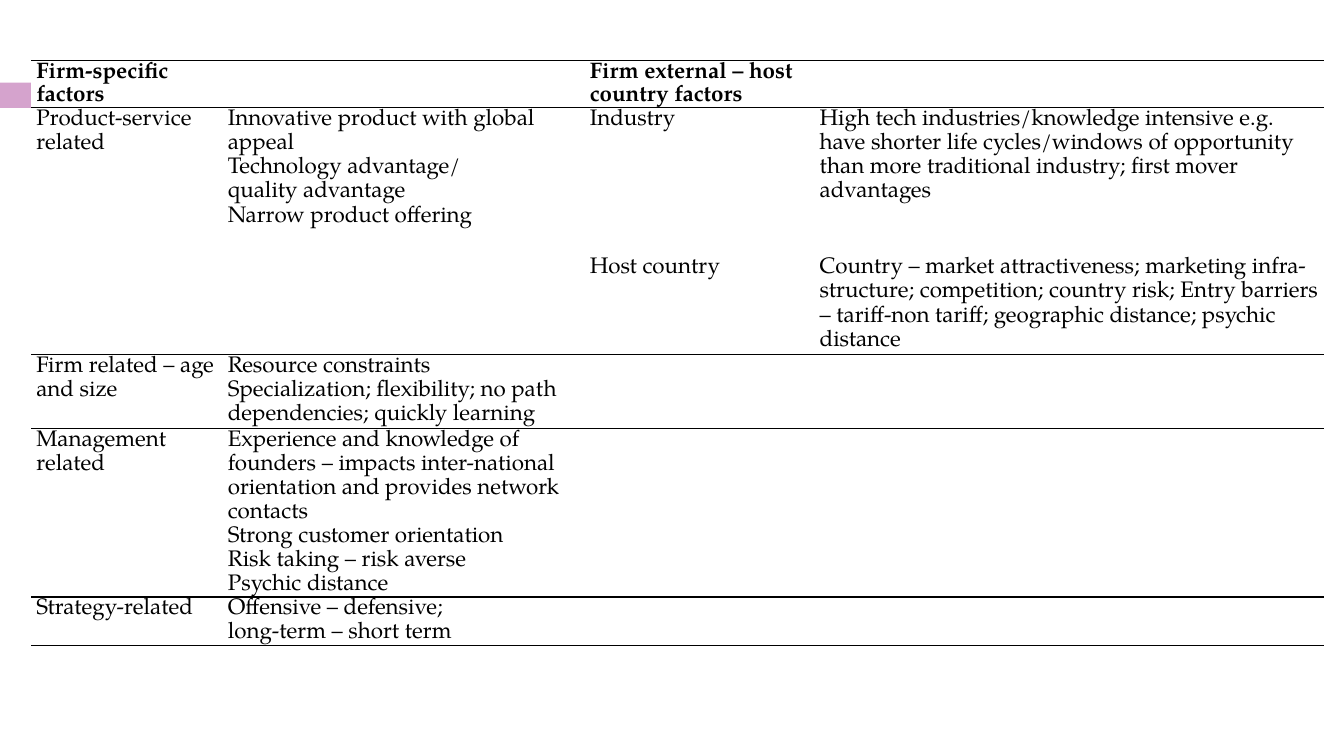
import pptx
import pptx.dml.color
import pptx.enum.shapes
import pptx.enum.text
import pptx.oxml
import pptx.oxml.ns
import pptx.util

UNIT = 0.1  # inches per grid column and row
FONT = "TeX Gyre Pagella"
INK, PAPER, ACCENT = "000000", "FFFFFF", "D5A3CD"


def color(hex_code):
    return pptx.dml.color.RGBColor.from_string(hex_code)


def grid(count):
    return pptx.util.Inches(count * UNIT)


class FactorSlide:
    """Holds the text style and the slide being filled."""

    def __init__(self, deck, size=16, spacing=1.07):
        self.slide = deck.slides.add_slide(deck.slide_layouts[6])
        self.size, self.spacing = size, spacing

    def bar(self, left, top, width, height, fill):
        bar = self.slide.shapes.add_shape(
            pptx.enum.shapes.MSO_SHAPE.RECTANGLE,
            grid(left), grid(top), grid(width), grid(height))
        bar.shadow.inherit = False
        bar.fill.solid()
        bar.fill.fore_color.rgb = color(fill)
        bar.line.fill.background()

    def table(self, left, top, columns, rows):
        table = self.slide.shapes.add_table(
            len(rows), len(columns), grid(left), grid(top),
            grid(sum(columns)), grid(sum(rows))).table
        table.first_row = table.horz_banding = False
        for column, width in zip(table.columns, columns):
            column.width = grid(width)
        for row, height in zip(table.rows, rows):
            row.height = grid(height)
        return table

    def cell(self, cell, lines, bold, rules):
        cell.margin_left = cell.margin_right = pptx.util.Inches(0.05)
        cell.margin_top = cell.margin_bottom = 0
        cell.vertical_anchor = pptx.enum.text.MSO_ANCHOR.TOP
        cell.fill.solid()
        cell.fill.fore_color.rgb = color(PAPER)
        self.borders(cell, rules)
        cell.text_frame.text = "\n".join(lines)
        for paragraph in cell.text_frame.paragraphs:
            paragraph.line_spacing = self.spacing
            font = paragraph.font
            if paragraph.runs:
                font = paragraph.runs[0].font
            font.name, font.bold = FONT, bold
            font.size = pptx.util.Pt(self.size)
            font.color.rgb = color(INK)

    def borders(self, cell, rules):
        properties = cell._tc.get_or_add_tcPr()
        for position, side in enumerate("LRTB"):
            paint = "<a:noFill/>"
            if side in rules:
                paint = f'<a:solidFill><a:srgbClr val="{INK}"/></a:solidFill>'
            properties.insert(position, pptx.oxml.parse_xml(
                f'<a:ln{side} {pptx.oxml.ns.nsdecls("a")} w="12700">'
                f'{paint}</a:ln{side}>'))


# Factors by row: firm group, its traits, host group, its traits
FACTORS = [
    [["Firm-specific factors"], [],
     ["Firm external – host country factors"], []],
    [["Product-service related"],
     ["Innovative product with global appeal", "Technology advantage/",
      "quality advantage", "Narrow product offering"],
     ["Industry"],
     ["High tech industries/knowledge intensive e.g. have shorter life "
      "cycles/windows of opportunity than more traditional industry; "
      "first mover advantages"]],
    [[], [], ["Host country"],
     ["Country – market attractiveness; marketing infra-structure; "
      "competition; country risk; Entry barriers – tariff-non tariff; "
      "geographic distance; psychic distance"]],
    [["Firm related – age and size"],
     ["Resource constraints",
      "Specialization; flexibility; no path dependencies; quickly learning"],
     [], []],
    [["Management related"],
     ["Experience and knowledge of founders – impacts inter-national "
      "orientation and provides network contacts",
      "Strong customer orientation", "Risk taking – risk averse",
      "Psychic distance"], [], []],
    [["Strategy-related"],
     ["Offensive – defensive;", "long-term – short term"], [], []],
]
COLUMNS = [19, 35.9, 22.8, 50.5]
ROWS = [4.7, 14.7, 9.8, 7.3, 16.7, 4.8]
PRODUCT, HOST = 1, 2  # rows that share one block without a rule between


def main():
    deck = pptx.Presentation()
    deck.slide_width = pptx.util.Inches(13.33)
    deck.slide_height = pptx.util.Inches(7.5)
    page = FactorSlide(deck)

    # Accent bar at the left edge
    page.bar(0, 8.2, 9.5, 2.5, ACCENT)

    # Factor table
    factors = page.table(3.1, 6, COLUMNS, ROWS)
    for r, row in enumerate(FACTORS):
        rules = {PRODUCT: "T", HOST: "B"}.get(r, "TB")
        for c, lines in enumerate(row):
            merged = r in (PRODUCT, HOST) and c < 2
            page.cell(factors.cell(r, c), lines, r == 0,
                      "TB" if merged else rules)

    # Merged blocks
    for c in (0, 1):
        factors.cell(PRODUCT, c).merge(factors.cell(HOST, c))
    for r in range(HOST + 1, len(ROWS)):
        factors.cell(r, 2).merge(factors.cell(r, 3))

    deck.save("out.pptx")


if __name__ == "__main__":
    main()
